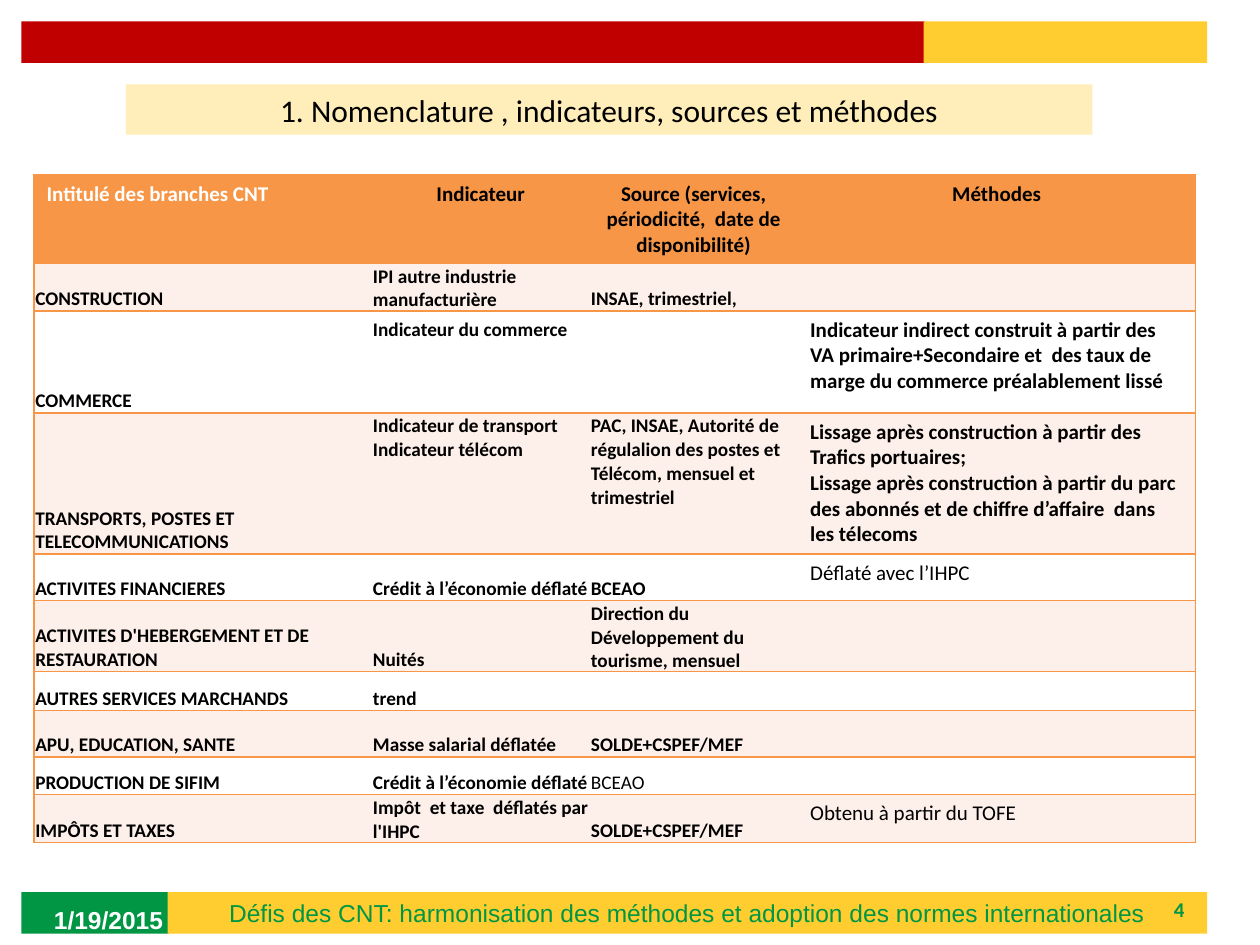
from lxml import etree
from pptx import Presentation
from pptx.dml.color import RGBColor
from pptx.enum.shapes import MSO_SHAPE
from pptx.enum.text import MSO_ANCHOR, PP_ALIGN
from pptx.oxml.ns import qn
from pptx.util import Inches, Pt

RECTANGLE = MSO_SHAPE.RECTANGLE
LEFT, CENTER, RIGHT = PP_ALIGN.LEFT, PP_ALIGN.CENTER, PP_ALIGN.RIGHT
TOP, MIDDLE, BOTTOM = MSO_ANCHOR.TOP, MSO_ANCHOR.MIDDLE, MSO_ANCHOR.BOTTOM

GREEN = RGBColor(0x00, 0x96, 0x44)
YELLOW = RGBColor(0xFF, 0xCD, 0x2F)
RED = RGBColor(0xC0, 0x00, 0x00)
CREAM = RGBColor(0xFF, 0xEE, 0xB9)
ORANGE = RGBColor(0xF7, 0x96, 0x46)
PINK = RGBColor(0xFD, 0xEF, 0xE9)
WHITE = RGBColor(0xFF, 0xFF, 0xFF)
BLACK = RGBColor(0x00, 0x00, 0x00)

NO_STYLE = "{2D5ABB26-0587-4C30-8999-92F81FD0307C}"
TITLE = "1. Nomenclature , indicateurs, sources et méthodes"
FOOTER = "Défis des CNT: harmonisation des méthodes et adoption des normes internationales"
DATE = "1/19/2015"
PAGE = "4"

BARS = [
    (0.17, 7.08, 1.17, 0.33, GREEN),
    (1.33, 7.08, 8.25, 0.33, YELLOW),
    (0.17, 0.17, 7.17, 0.33, RED),
    (7.33, 0.17, 2.25, 0.33, YELLOW),
    (1, 0.67, 7.67, 0.4, CREAM),
]
LABELS = [
    (1.33, 7.08, 8.25, 0.33, FOOTER, "Arial", 14, GREEN, False, CENTER),
    (7.17, 7.08, 2.33, 0.27, PAGE, "Calibri", 12, GREEN, True, RIGHT),
    (0.33, 7.1, 2.33, 0.4, DATE, "Arial", 14, WHITE, True, LEFT),
    (1, 0.67, 7.67, 0.4, TITLE, "Calibri", 18, BLACK, False, CENTER),
]

COLUMN_WIDTHS = [2.68, 1.73, 1.65, 3.16]
ROW_HEIGHTS = [0.7, 0.37, 0.81, 1.12, 0.37, 0.56, 0.31, 0.37, 0.3, 0.38]
ROWS = [
    ("Intitulé des branches CNT", "Indicateur",
     "Source (services, périodicité,  date de disponibilité)", "Méthodes"),
    ("CONSTRUCTION", "IPI autre industrie manufacturière", "INSAE, trimestriel,", ""),
    ("COMMERCE", "Indicateur du commerce", "",
     "Indicateur indirect construit à partir des VA primaire+Secondaire et  "
     "des taux de marge du commerce préalablement lissé"),
    ("TRANSPORTS, POSTES ET TELECOMMUNICATIONS",
     "Indicateur de transport\nIndicateur télécom",
     "PAC, INSAE, Autorité de régulalion des postes et Télécom, mensuel et trimestriel",
     "Lissage après construction à partir des Trafics portuaires;\n"
     "Lissage après construction à partir du parc des abonnés et de chiffre d’affaire  "
     "dans les télecoms"),
    ("ACTIVITES FINANCIERES", "Crédit à l’économie déflaté", "BCEAO", "Déflaté avec l’IHPC"),
    ("ACTIVITES D'HEBERGEMENT ET DE RESTAURATION", "Nuités",
     "Direction du Développement du tourisme, mensuel", ""),
    ("AUTRES SERVICES MARCHANDS", "trend", "", ""),
    ("APU, EDUCATION, SANTE", "Masse salarial déflatée", "SOLDE+CSPEF/MEF", ""),
    ("PRODUCTION DE SIFIM", "Crédit à l’économie déflaté", "BCEAO", ""),
    ("IMPÔTS ET TAXES", "Impôt  et taxe  déflatés par l'IHPC", "SOLDE+CSPEF/MEF",
     "Obtenu à partir du TOFE"),
]
REGULAR_CELLS = {(4, 3), (8, 2), (9, 3)}
TOP_INSETS = {(2, 1): 0.06, (3, 1): 0.01, (3, 2): 0.01}


def style_paragraphs(text_frame, font_name, size, color, bold, alignment):
    for paragraph in text_frame.paragraphs:
        paragraph.alignment = alignment
        font = paragraph.font
        font.name, font.size, font.bold = font_name, Pt(size), bold
        font.color.rgb = color


def set_margins(target, left, top, right, bottom):
    target.margin_left, target.margin_top = Inches(left), Inches(top)
    target.margin_right, target.margin_bottom = Inches(right), Inches(bottom)


def add_borders(cell, sides):
    properties = cell._tc.get_or_add_tcPr()
    for index, side in enumerate(sides):
        line = etree.Element(qn(f"a:ln{side}"), w=str(Pt(1)))
        fill = etree.SubElement(line, qn("a:solidFill"))
        etree.SubElement(fill, qn("a:srgbClr"), val=str(ORANGE))
        properties.insert(index, line)


def fill_cell(cell, row, column, text):
    header = row == 0
    wide = header or (column == 3 and text)
    cell.text = text
    cell.fill.solid()
    cell.fill.fore_color.rgb = ORANGE if header else PINK if row % 2 else WHITE
    if wide:
        set_margins(cell, 0.1, 0.05, 0.1, 0.05)
        cell.vertical_anchor = TOP
    else:
        inset = TOP_INSETS.get((row, column))
        set_margins(cell, 0.01, inset or 0.01, 0.01, 0)
        cell.vertical_anchor = BOTTOM if inset is None else TOP
    style_paragraphs(
        cell.text_frame, "Calibri", 12 if wide else 11,
        WHITE if header and column == 0 else BLACK,
        (row, column) not in REGULAR_CELLS,
        CENTER if header and column else LEFT,
    )
    add_borders(cell, {0: "LTB", 3: "RTB"}.get(column, "TB"))


presentation = Presentation()
presentation.slide_width, presentation.slide_height = Inches(10), Inches(7.5)
slide = presentation.slides.add_slide(presentation.slide_layouts[6])

for *box, color in BARS:
    bar = slide.shapes.add_shape(RECTANGLE, *map(Inches, box))
    bar.shadow.inherit = False
    bar.fill.solid()
    bar.fill.fore_color.rgb = color
    bar.line.fill.background()

for *box, text, font_name, size, color, bold, alignment in LABELS:
    text_frame = slide.shapes.add_textbox(*map(Inches, box)).text_frame
    text_frame.word_wrap = True
    text_frame.vertical_anchor = MIDDLE
    text_frame.text = text
    style_paragraphs(text_frame, font_name, size, color, bold, alignment)

table = slide.shapes.add_table(
    len(ROWS), len(COLUMN_WIDTHS), Inches(0.27), Inches(1.39),
    Inches(sum(COLUMN_WIDTHS)), Inches(sum(ROW_HEIGHTS)),
).table
table._tbl.tblPr.find(qn("a:tableStyleId")).text = NO_STYLE
for column, width in zip(table.columns, COLUMN_WIDTHS):
    column.width = Inches(width)
for row, (height, texts) in enumerate(zip(ROW_HEIGHTS, ROWS)):
    table.rows[row].height = Inches(height)
    for column, text in enumerate(texts):
        fill_cell(table.cell(row, column), row, column, text)

presentation.save("out.pptx")
